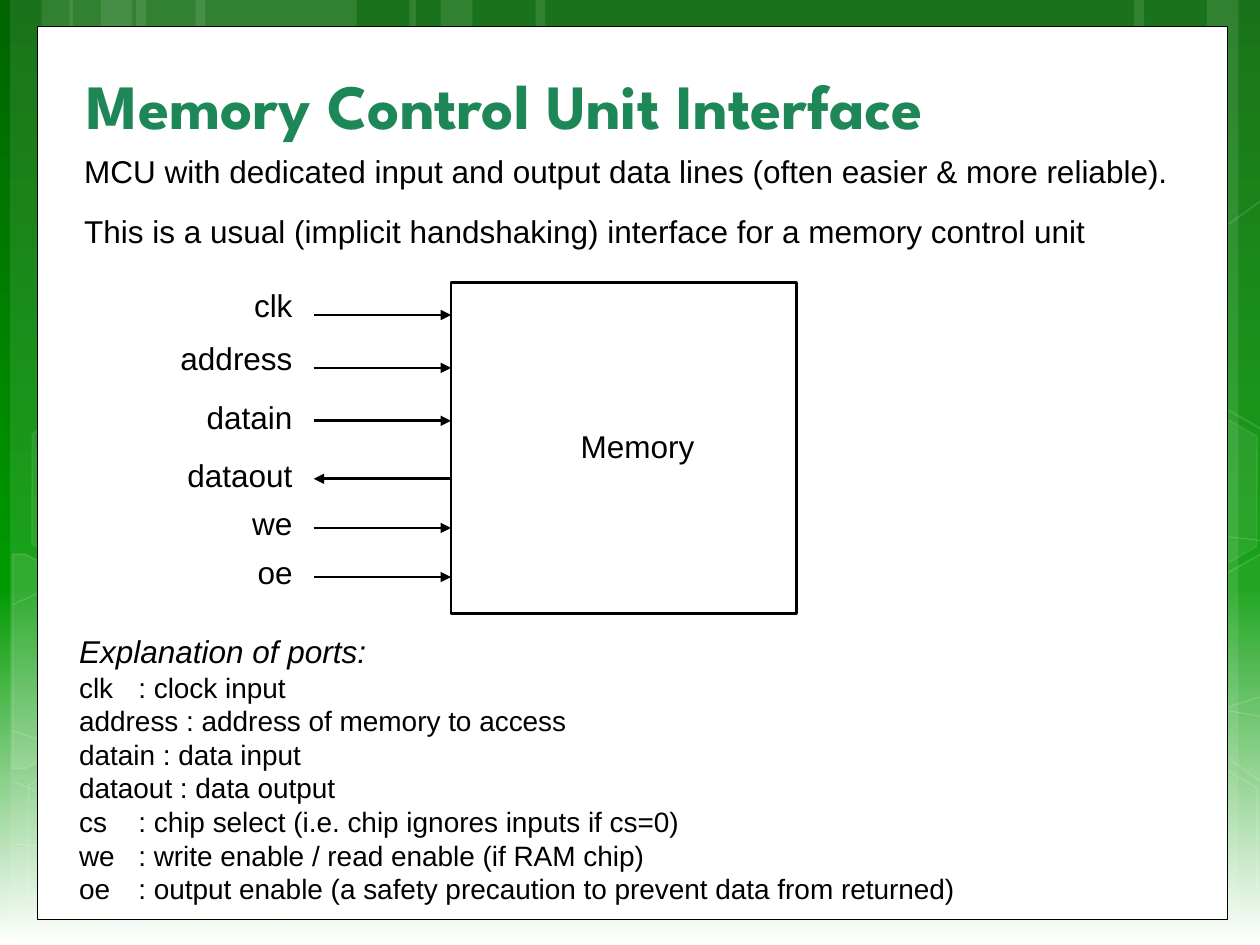
from copy import deepcopy

from lxml.etree import SubElement
from pptx import Presentation
from pptx.dml.color import RGBColor
from pptx.enum.shapes import MSO_CONNECTOR as Connector, MSO_SHAPE as Shape
from pptx.enum.text import MSO_ANCHOR as Anchor, PP_ALIGN as Align
from pptx.oxml.ns import qn
from pptx.util import Emu, Inches, Pt

COLUMNS, ROWS = 100, 75
WHITE, BLACK, GREEN = "FFFFFF", "000000", "1D8757"


def color(hex_text):
    return RGBColor.from_string(hex_text)


class SlideBuilder:
    """Draws on one slide; lengths are columns and rows of a 100 by 75 grid."""

    font = "Arial"
    size = 18

    def __init__(self, presentation):
        self.cell = presentation.slide_width / COLUMNS
        self.slide = presentation.slides.add_slide(presentation.slide_layouts[5])
        self.shapes = self.slide.shapes

    def grid(self, *lengths):
        return [Emu(round(length * self.cell)) for length in lengths]

    def background(self, stops, angle):
        fill = self.slide.background.fill
        fill.gradient()
        fill.gradient_angle = angle
        stop_list = self.slide.element.find(".//" + qn("a:gsLst"))
        while len(stop_list) < len(stops):
            stop_list.append(deepcopy(stop_list[0]))
        for stop, (position, hex_text) in zip(fill.gradient_stops, stops):
            stop.position = position
            stop.color.rgb = color(hex_text)

    def paint(self, part, hex_text, alpha=100):
        """Give a fill a solid colour with an opacity in percent."""
        part.solid()
        part.fore_color.rgb = color(hex_text)
        if alpha < 100:
            tint = part.fore_color._xFill[0]
            SubElement(tint, qn("a:alpha"), val=str(alpha * 1000))

    def style(self, shape, fill_alpha, line, line_width, line_alpha):
        shape.shadow.inherit = False
        if fill_alpha:
            self.paint(shape.fill, WHITE, fill_alpha)
        else:
            shape.fill.background()
        if line:
            shape.line.width = Pt(line_width)
            self.paint(shape.line.fill, line, line_alpha)
        else:
            shape.line.fill.background()

    def box(self, kind, place, fill_alpha=100, line=None, line_width=1,
            line_alpha=100, rotation=0):
        shape = self.shapes.add_shape(kind, *self.grid(*place))
        shape.rotation = rotation
        self.style(shape, fill_alpha, line, line_width, line_alpha)
        return shape

    def outline(self, points, closed, fill_alpha, line_width, line_alpha):
        builder = self.shapes.build_freeform(*points[0], scale=self.cell)
        builder.add_line_segments(points[1:], close=closed)
        shape = builder.convert_to_shape()
        self.style(shape, fill_alpha, WHITE, line_width, line_alpha)

    def title(self, text, place):
        title = self.shapes.title
        self.shapes._spTree.append(title._element)  # in front of the panel
        title.left, title.top, title.width, title.height = self.grid(*place)
        title.text_frame.text = text
        title.text_frame.vertical_anchor = Anchor.BOTTOM
        paragraph = title.text_frame.paragraphs[0]
        paragraph.alignment = Align.LEFT
        font = paragraph.font
        font.name, font.size, font.bold = "League Spartan", Pt(36), True
        font.color.rgb = color(GREEN)

    def text(self, lines, place, align=Align.LEFT, wrap=True):
        frame = self.shapes.add_textbox(*self.grid(*place)).text_frame
        frame.word_wrap = wrap
        frame.text = "\n".join(lines)
        for paragraph in frame.paragraphs:
            paragraph.alignment = align
            paragraph.font.name, paragraph.font.size = self.font, Pt(self.size)
            paragraph.font.color.rgb = color(BLACK)
        return frame.paragraphs

    def arrow(self, start, end, y):
        connector = self.shapes.add_connector(
            Connector.STRAIGHT, *self.grid(start, y, end, y))
        connector.line.width = Pt(1.5)
        connector.line.color.rgb = color(BLACK)
        SubElement(connector.line._get_or_add_ln(), qn("a:tailEnd"), type="triangle")
        SubElement(connector._element.spPr, qn("a:effectLst"))


# Backdrop: (left, width) of the stripes, in columns
STRIPES = [(10.8, 17.5), (0.8, 5), (3.3, 8.3), (15.5, 17.5), (5.5, 5), (8, 8.3),
           (73.3, 17.5), (95.8, 5), (90, 8.3), (42.5, 30.8), (32.5, 5), (35, 8.3)]
WAVES = [
    [(0.7, 67.3), (19, 67.8), (45.8, 66.5), (79.2, 61.7), (100.7, 55.1)],
    [(0.7, 47.7), (12.1, 43.1), (34.7, 38.7), (65.4, 38.7), (100.7, 43.4)],
    [(0.6, 61.7), (33.4, 74.9)],
    [(0.7, 57.8), (12.8, 61.6), (35.7, 67.3), (62.8, 71.8), (85.3, 73.6),
     (94.5, 73.8), (100.7, 73.4)],
    [(24.2, 74.9), (30.2, 69.1), (38.8, 63.9), (47, 60.9), (60.8, 57.8),
     (79.4, 56.2), (95.3, 56.2), (100.6, 56.6)],
]
# (left, top, fill opacity, line opacity)
HEXAGONS = [(49.7, 58.9, 6, 12), (1.1, 59.1, 0, 12), (1.4, 31.2, 7, 8),
            (17.4, 59.2, 0, 12), (83.4, 59.3, 0, 12), (83.4, 31.4, 7, 8)]
# (points, fill opacity) of the hexagons cut by the slide's edges
CUT_HEXAGONS = [
    ([(0.8, 44.5), (1.9, 43.8), (9.6, 48.2), (9.5, 57), (2, 61.4), (0.8, 60.7)], 10),
    ([(92.6, 48.5), (100.1, 44.1), (100.9, 44.6), (100.9, 61.3), (100.2, 61.7),
      (92.6, 57.3)], 4),
    ([(92.6, 20.7), (100.1, 16.3), (101, 16.8), (100.9, 33.5), (100.2, 33.9),
      (92.6, 29.5)], 0),
]
# (name, top of label, height of arrow, is an input)
PORTS = [("clk", 22.2, 25, True), ("address", 26.4, 29.2, True),
         ("datain", 31.1, 33.4, True), ("dataout", 35.7, 38, False),
         ("we", 39.5, 41.9, True), ("oe", 43.4, 45.8, True)]
EXPLANATION = [
    "Explanation of ports:",
    "clk\t: clock input",
    "address : address of memory to access",
    "datain : data input",
    "dataout : data output",
    "cs\t: chip select (i.e. chip ignores inputs if cs=0)",
    "we\t: write enable / read enable (if RAM chip)",
    "oe\t: output enable (a safety precaution to prevent data from returned)",
]


def main():
    presentation = Presentation()
    presentation.slide_width, presentation.slide_height = Inches(10), Inches(7.5)
    builder = SlideBuilder(presentation)

    # Backdrop
    builder.background([(0, "006400"), (0.62, "009900"), (1, WHITE)], 270)
    for left, width in STRIPES:
        builder.box(Shape.RECTANGLE, (left, 0, width, ROWS), fill_alpha=10)
    for points in WAVES:
        builder.outline(points, False, 0, 0.5, 20)
    for left, top, fill_alpha, line_alpha in HEXAGONS:
        hexagon = builder.box(Shape.HEXAGON, (left, top, 17.5, 15.2), fill_alpha,
                              WHITE, 1, line_alpha, rotation=30)
        hexagon.adjustments[0] = 0.285
    for points, fill_alpha in CUT_HEXAGONS:
        builder.outline(points, True, fill_alpha, 1, 12)

    # Panel, title and introduction
    builder.box(Shape.RECTANGLE, (3, 2.1, 94.4, 70.9), line=BLACK, line_width=0.5)
    builder.title("Memory Control Unit Interface", (5.9, 4.2, 88.4, 7.6))
    builder.text(["MCU with dedicated input and output data lines "
                  "(often easier & more reliable)."], (5.7, 11.6, 90.3, 4))
    builder.text(["This is a usual (implicit handshaking) interface "
                  "for a memory control unit"], (5.7, 16.3, 87.6, 4))

    # Memory block and its ports
    outer, inner = 24.9, 35.8
    builder.box(Shape.RECTANGLE, (inner, 22.4, 27.4, 26.3), line=BLACK, line_width=1.5)
    builder.text(["Memory"], (45.1, 33.4, 11.1, 4), wrap=False)
    for name, label_top, y, is_input in PORTS:
        builder.text([name], (13.2, label_top, 11, 4), Align.RIGHT)
        start, end = (outer, inner) if is_input else (inner, outer)
        builder.arrow(start, end, y)

    # Explanation of ports
    heading, *ports = builder.text(EXPLANATION, (5.3, 49.7, 84.4, 23.2))
    heading.font.italic = True
    for paragraph in ports:
        paragraph.font.size = Pt(16)
        if "\t" in paragraph.text:
            properties = paragraph._p.get_or_add_pPr()
            tabs = SubElement(properties, qn("a:tabLst"))
            SubElement(tabs, qn("a:tab"), pos=str(Inches(0.47)), algn="l")
            properties.insert(0, tabs)  # tab stops come before the font

    presentation.save("out.pptx")


if __name__ == "__main__":
    main()
